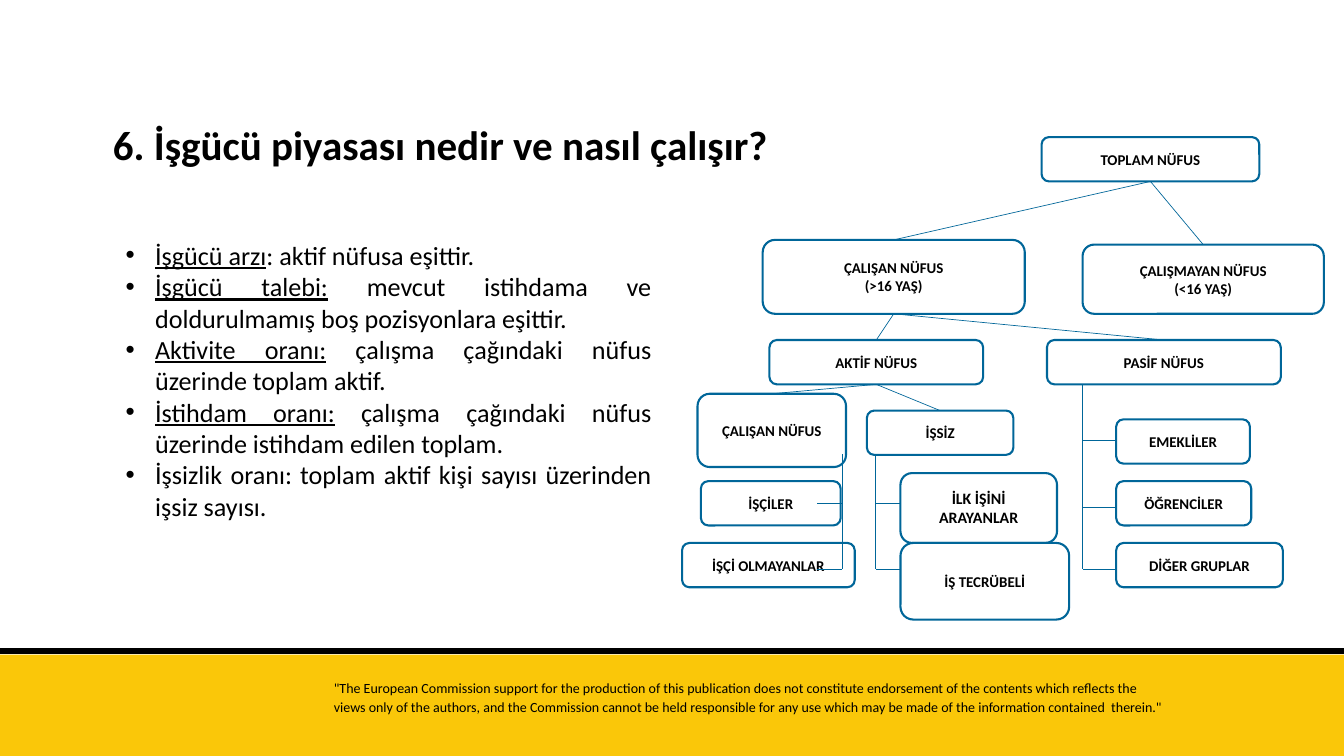
from lxml.etree import SubElement
from pptx import Presentation
from pptx.dml.color import RGBColor
from pptx.enum.shapes import MSO_CONNECTOR, MSO_SHAPE
from pptx.enum.text import MSO_ANCHOR, PP_ALIGN
from pptx.oxml.ns import qn
from pptx.util import Pt

PX = 9144
BLACK, WHITE, BLUE, YELLOW = "000000", "FFFFFF", "006699", "FAC709"
FONT = "Calibri"

TITLE = "6. İşgücü piyasası nedir ve nasıl çalışır?"
DEFINITIONS = [
    ("İşgücü arzı", ": aktif nüfusa eşittir."),
    ("İşgücü talebi:", " mevcut istihdama ve doldurulmamış boş pozisyonlara eşittir."),
    ("Aktivite oranı:", " çalışma çağındaki nüfus üzerinde toplam aktif."),
    ("İstihdam oranı:", " çalışma çağındaki nüfus üzerinde istihdam edilen toplam."),
    ("", "İşsizlik oranı: toplam aktif kişi sayısı üzerinden işsiz sayısı."),
]
DISCLAIMER = [
    ("\"The European Commission support for the production of this publication does not "
     "constitute endorsement of the contents which reflects the", 1.08),
    ("views only of the authors, and the Commission cannot be held responsible for any use "
     "which may be made of the information contained  therein.\"", 1.13),
]
BOXES = {
    "total": (1550, 204, 324, 66, ["TOPLAM NÜFUS"], 16),
    "working_age": (1135, 357, 390, 110, ["ÇALIŞAN NÜFUS", "(>16 YAŞ)"], 16),
    "under_age": (1611, 364, 359, 103, ["ÇALIŞMAYAN NÜFUS", "(<16 YAŞ)"], 16),
    "active": (1145, 506, 318, 66, ["AKTİF NÜFUS"], 16),
    "passive": (1558, 506, 348, 66, ["PASİF NÜFUS"], 16),
    "employed": (1038, 586, 221, 109, ["ÇALIŞAN NÜFUS"], 16),
    "unemployed": (1290, 611, 218, 66, ["İŞSİZ"], 16),
    "workers": (1043, 716, 208, 66, ["İŞÇİLER"], 16),
    "non_workers": (1015, 808, 257, 66, ["İŞÇİ OLMAYANLAR"], 16),
    "first_job": (1340, 704, 233, 104, ["İLK İŞİNİ ARAYANLAR"], 17),
    "experienced": (1340, 808, 251, 114, ["İŞ TECRÜBELİ"], 16),
    "retired": (1661, 624, 199, 66, ["EMEKLİLER"], 16),
    "students": (1661, 716, 201, 66, ["ÖĞRENCİLER"], 16),
    "others": (1661, 808, 248, 66, ["DİĞER GRUPLAR"], 16),
}
LINKS = [
    ("total", "working_age"), ("total", "under_age"),
    ("working_age", "active"), ("working_age", "passive"),
    ("active", "employed"), ("active", "unemployed"),
]
RAILS = [
    (1611, 572, 1661, [655, 755, 847]),
    (1253, 676, 1216, [749, 847]),
    (1303, 676, 1340, [749, 847]),
]


def rgb(color):
    return RGBColor.from_string(color)


def place(sp, x, y, w, h):
    sp.left, sp.top, sp.width, sp.height = x * PX, y * PX, w * PX, h * PX


def add_run(p, text, size, bold=False, underline=False):
    r = p.add_run()
    r.text = text
    r.font.name, r.font.size = FONT, Pt(size)
    r.font.bold, r.font.underline = bold, underline
    r.font.color.rgb = rgb(BLACK)


def paragraphs(tf, items):
    for i, item in enumerate(items):
        yield (tf.add_paragraph() if i else tf.paragraphs[0]), item


def add_text(slide, x, y, w, h):
    tf = slide.shapes.add_textbox(x * PX, y * PX, w * PX, h * PX).text_frame
    tf.word_wrap = True
    return tf


def add_line(slide, x1, y1, x2, y2, color=BLUE, width=0.75):
    line = slide.shapes.add_connector(
        MSO_CONNECTOR.STRAIGHT, *(round(v * PX) for v in (x1, y1, x2, y2)))
    line.line.color.rgb = rgb(color)
    line.line.width = Pt(width)
    SubElement(line._element.spPr, qn("a:effectLst"))


def add_bullet(p):
    pPr = p._p.get_or_add_pPr()
    pPr.set("marL", str(50 * PX))
    pPr.set("indent", str(-44 * PX))
    SubElement(SubElement(pPr, qn("a:buClr")), qn("a:srgbClr")).set("val", BLACK)
    SubElement(pPr, qn("a:buFont")).set("typeface", "Arial")
    SubElement(pPr, qn("a:buChar")).set("char", "•")


def add_box(slide, x, y, w, h, lines, size):
    sp = slide.shapes.add_shape(MSO_SHAPE.ROUNDED_RECTANGLE, x * PX, y * PX, w * PX, h * PX)
    sp.shadow.inherit = False
    sp.fill.solid()
    sp.fill.fore_color.rgb = rgb(WHITE)
    sp.line.color.rgb = rgb(BLUE)
    sp.line.width = Pt(2.25)
    tf = sp.text_frame
    tf.word_wrap = True
    tf.vertical_anchor = MSO_ANCHOR.MIDDLE
    for p, text in paragraphs(tf, lines):
        p.alignment = PP_ALIGN.CENTER
        add_run(p, text, size, bold=True)


def add_footer(slide):
    band = slide.shapes.add_shape(MSO_SHAPE.RECTANGLE, 0, 974 * PX, 2000 * PX, 151 * PX)
    band.shadow.inherit = False
    band.fill.solid()
    band.fill.fore_color.rgb = rgb(YELLOW)
    band.line.fill.background()
    add_line(slide, 0, 969, 2000, 969, BLACK, 6.75)
    tf = add_text(slide, 487, 1004, 1263, 88)
    for p, (text, spacing) in paragraphs(tf, DISCLAIMER):
        p.alignment = PP_ALIGN.JUSTIFY
        p.line_spacing = spacing
        add_run(p, text, 15)


def add_title(slide):
    title = slide.shapes.title
    place(title, 158, 172, 1100, 84)
    tf = title.text_frame
    tf.word_wrap = True
    tf.vertical_anchor = MSO_ANCHOR.TOP
    p = tf.paragraphs[0]
    p.alignment = PP_ALIGN.LEFT
    add_run(p, TITLE, 44, bold=True)


def add_definitions(slide):
    tf = add_text(slide, 171, 351, 808, 529)
    for p, (term, meaning) in paragraphs(tf, DEFINITIONS):
        add_bullet(p)
        p.alignment = PP_ALIGN.JUSTIFY
        if term:
            add_run(p, term, 28, underline=True)
        add_run(p, meaning, 28)


def add_tree(slide):
    for box in BOXES.values():
        add_box(slide, *box)
    for parent, child in LINKS:
        px, py, pw, ph = BOXES[parent][:4]
        cx, cy, cw = BOXES[child][:3]
        add_line(slide, px + pw / 2, py + ph, cx + cw / 2, cy)
    for x, top, end, branches in RAILS:
        add_line(slide, x, top, x, branches[-1])
        for y in branches:
            add_line(slide, end, y, x, y)


def main():
    prs = Presentation()
    prs.slide_width, prs.slide_height = 2000 * PX, 1125 * PX
    slide = prs.slides.add_slide(prs.slide_layouts[5])
    add_footer(slide)
    add_title(slide)
    add_definitions(slide)
    add_tree(slide)
    prs.save("out.pptx")


if __name__ == "__main__":
    main()
